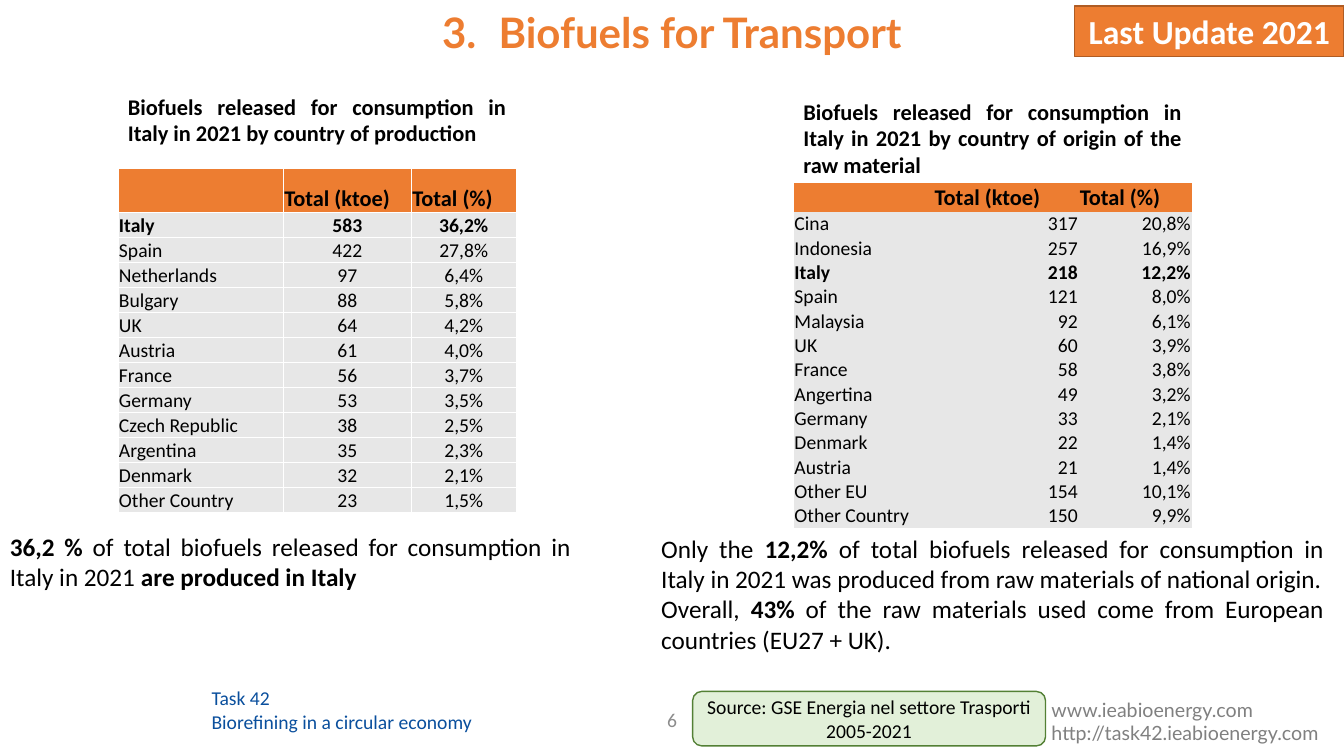
from lxml.etree import SubElement as Sub
from pptx import Presentation
from pptx.dml.color import RGBColor as Rgb
from pptx.enum.shapes import MSO_SHAPE as Kind
from pptx.enum.text import MSO_ANCHOR as Anchor, PP_ALIGN as Align
from pptx.oxml.ns import qn
from pptx.util import Inches, Pt

THEME = {
    "font": "Calibri", "alt": "Lato",
    "black": "000000", "white": "FFFFFF", "orange": "ED7D31", "rust": "AF5C24",
    "cell": "E7E7E7", "mint": "E2F0D9", "green": "538035",
    "blue": "0A4F9D", "gray": "808080", "pale": "8C8C8C",
    "title": 30, "badge": 24, "body": 18, "head": 16, "small": 14,
}
NO_GRID = "{2D5ABB26-0587-4C30-8999-92F81FD0307C}"
HEAD = ("", "Total (ktoe)", "Total (%)")

MADE = {
    "at": (1.17, 1.67), "cols": (1.64, 1.27, 1.04), "tall": 0.44,
    "align": Align.CENTER, "grid": True,
    "rows": [
        ("Italy", "583", "36,2%"), ("Spain", "422", "27,8%"),
        ("Netherlands", "97", "6,4%"), ("Bulgary", "88", "5,8%"),
        ("UK", "64", "4,2%"), ("Austria", "61", "4,0%"),
        ("France", "56", "3,7%"), ("Germany", "53", "3,5%"),
        ("Czech Republic", "38", "2,5%"), ("Argentina", "35", "2,3%"),
        ("Denmark", "32", "2,1%"), ("Other Country", "23", "1,5%"),
    ],
}
GROWN = {
    "at": (7.87, 1.82), "cols": (1.39, 1.44, 1.12), "tall": 0.28,
    "align": Align.RIGHT, "grid": False,
    "rows": [
        ("Cina", "317", "20,8%"), ("Indonesia", "257", "16,9%"),
        ("Italy", "218", "12,2%"), ("Spain", "121", "8,0%"),
        ("Malaysia", "92", "6,1%"), ("UK", "60", "3,9%"),
        ("France", "58", "3,8%"), ("Angertina", "49", "3,2%"),
        ("Germany", "33", "2,1%"), ("Denmark", "22", "1,4%"),
        ("Austria", "21", "1,4%"), ("Other EU", "154", "10,1%"),
        ("Other Country", "150", "9,9%"),
    ],
}
HIGH = 3.42

HEADS = [
    ((1.17, 0.87, 3.95, 0.64),
     "Biofuels released for consumption in Italy in 2021 by country of production"),
    ((7.87, 0.92, 3.95, 0.91),
     "Biofuels released for consumption in Italy in 2021 by country of origin of the raw material"),
]
NOTES = [
    ((0, 5.22, 5.76, 0.71), [
        [("36,2 % ", True),
         ("of total biofuels released for consumption in Italy in 2021 ", False),
         ("are produced in Italy", True)],
    ]),
    ((6.46, 5.24, 6.77, 1.62), [
        [("Only the ", False), ("12,2% ", True),
         ("of total biofuels released for consumption in Italy in 2021 "
          "was produced from raw materials of national origin.", False)],
        [("Overall, ", False), ("43%", True),
         (" of the raw materials used come from European countries (EU27 + UK).", False)],
    ]),
]
TASK = ["Task 42", "Biorefining in a circular economy"]
LINKS = ["www.ieabioenergy.com http://task42.ieabioenergy.com"]


def write(frame, paras, size="small", color="black", font="font", bold=False,
          align=Align.LEFT, anchor=Anchor.TOP):
    frame.word_wrap = True
    frame.vertical_anchor = anchor
    paras = [paras] if isinstance(paras, str) else paras
    for i, runs in enumerate(paras):
        para = frame.add_paragraph() if i else frame.paragraphs[0]
        para.alignment = align
        for text, heavy in [(runs, bold)] if isinstance(runs, str) else runs:
            run = para.add_run()
            run.text = text
            run.font.name = THEME[font]
            run.font.size = Pt(THEME[size])
            run.font.bold = heavy
            run.font.color.rgb = Rgb.from_string(THEME[color])


def label(slide, at, paras, **form):
    box = slide.shapes.add_textbox(*map(Inches, at))
    write(box.text_frame, paras, **form)
    return box


def panel(slide, kind, at, fill, edge, text, **form):
    shape = slide.shapes.add_shape(kind, *map(Inches, at))
    shape.shadow.inherit = False
    shape.fill.solid()
    shape.fill.fore_color.rgb = Rgb.from_string(THEME[fill])
    shape.line.color.rgb = Rgb.from_string(THEME[edge])
    shape.line.width = Pt(1)
    write(shape.text_frame, text, align=Align.CENTER, **form)


def number(para, start):
    para.line_spacing = Pt(32.5)
    props = para._p.get_or_add_pPr()
    props.set("marL", str(Inches(0.56)))
    props.set("indent", str(-Inches(0.56)))
    Sub(props, qn("a:buFont"), typeface="+mj-lt")
    Sub(props, qn("a:buAutoNum"), type="arabicPeriod", startAt=str(start))


def border(cell):
    props = cell._tc.get_or_add_tcPr()
    for side in ("lnL", "lnR", "lnT", "lnB"):
        line = Sub(props, qn("a:" + side), w=str(Pt(1)))
        Sub(Sub(line, qn("a:solidFill")), qn("a:srgbClr"), val=THEME["white"])


def grid(slide, data):
    rows = [HEAD] + data["rows"]
    cols = data["cols"]
    size = map(Inches, (*data["at"], sum(cols), HIGH))
    table = slide.shapes.add_table(len(rows), len(cols), *size).table
    table._tbl.tblPr.find(qn("a:tableStyleId")).text = NO_GRID
    table.horz_banding = False
    for col, width in zip(table.columns, cols):
        col.width = Inches(width)
    step = (HIGH - data["tall"]) / len(data["rows"])
    for r, row in enumerate(rows):
        table.rows[r].height = Inches(step if r else data["tall"])
        for c, text in enumerate(row):
            cell = table.cell(r, c)
            cell.margin_left = cell.margin_right = Inches(0.01)
            cell.margin_top, cell.margin_bottom = Pt(0.5), 0
            cell.vertical_anchor = Anchor.BOTTOM
            if data["grid"]:
                border(cell)
            cell.fill.solid()
            cell.fill.fore_color.rgb = Rgb.from_string(THEME["cell" if r else "orange"])
            if text:
                write(cell.text_frame, text, size="small" if r else "head",
                      bold=r == 0 or row[0] == "Italy", anchor=None,
                      align=data["align"] if r and c else Align.LEFT)
            else:
                end = cell.text_frame.paragraphs[0]._p.get_or_add_endParaRPr()
                end.set("sz", str(THEME["head"] * 100))


def main():
    deck = Presentation()
    deck.slide_width, deck.slide_height = Inches(13.33), Inches(7.5)
    slide = deck.slides.add_slide(deck.slide_layouts[6])
    label(slide, (5.54, 6.94, 2.25, 0.4), "6", color="pale",
          align=Align.CENTER, anchor=Anchor.MIDDLE)
    label(slide, (2, 6.76, 3, 0.57), TASK, color="blue")
    label(slide, (10.33, 6.87, 3.22, 0.57), LINKS, color="gray", font="alt")
    title = label(slide, (0, 0.06, 13.33, 0.97), "Biofuels for Transport", size="title",
                  color="orange", font="alt", bold=True, align=Align.CENTER)
    number(title.text_frame.paragraphs[0], 3)
    panel(slide, Kind.RECTANGLE, (10.66, 0.06, 2.67, 0.5), "orange", "rust",
          "Last Update 2021", size="badge", color="white", bold=True)
    panel(slide, Kind.ROUNDED_RECTANGLE, (6.87, 6.86, 3.5, 0.54), "mint", "green",
          "Source: GSE Energia nel settore Trasporti 2005-2021", anchor=Anchor.MIDDLE)
    for data in (MADE, GROWN):
        grid(slide, data)
    for at, text in HEADS:
        label(slide, at, text, size="head", bold=True, align=Align.JUSTIFY)
    for at, paras in NOTES:
        label(slide, at, paras, size="body", align=Align.JUSTIFY)
    deck.save("out.pptx")


if __name__ == "__main__":
    main()
